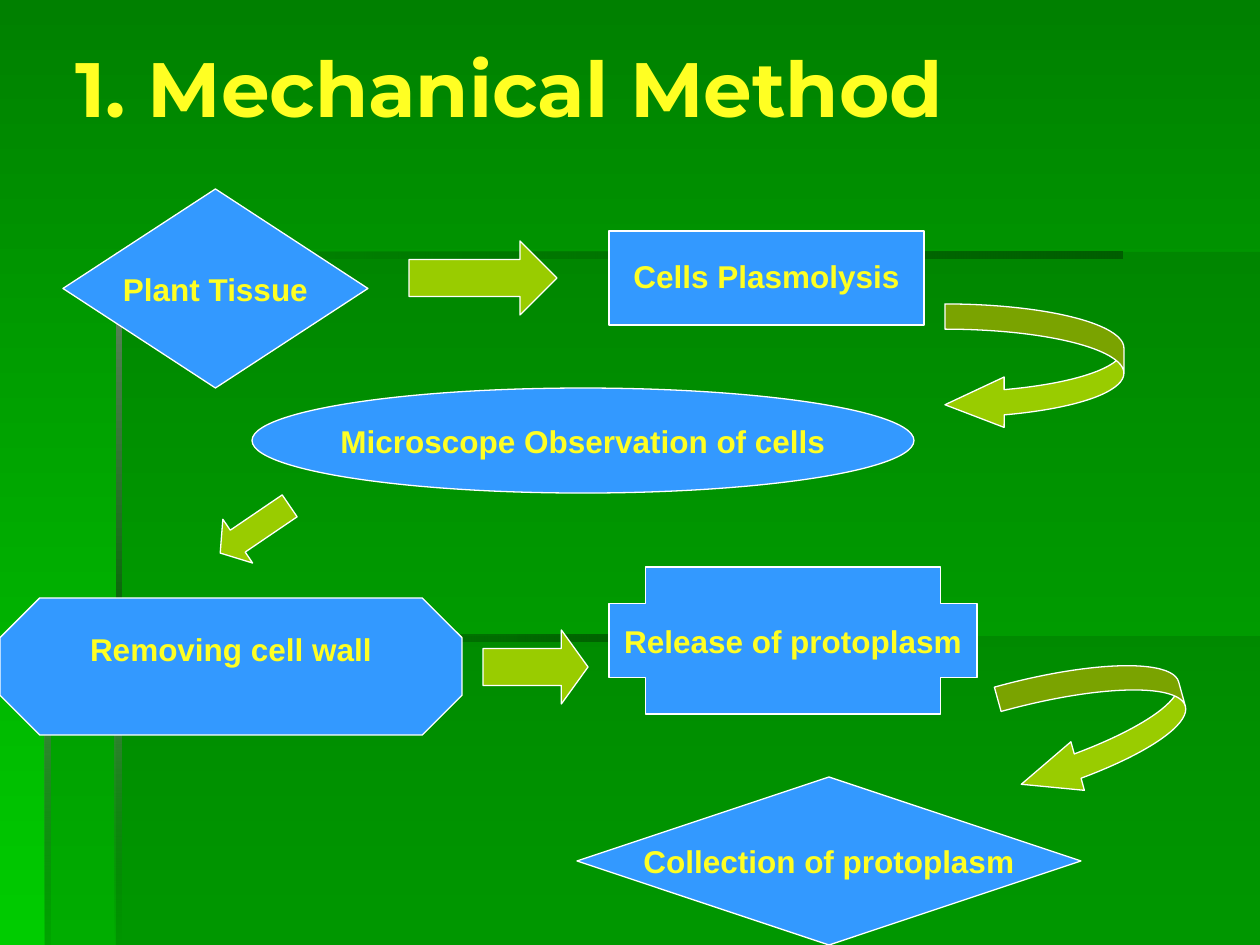
from pptx import Presentation
from pptx.dml.color import RGBColor
from pptx.enum.shapes import MSO_SHAPE as Shape
from pptx.enum.text import MSO_ANCHOR as Anchor, MSO_AUTO_SIZE as AutoSize, PP_ALIGN as Align
from pptx.oxml.ns import qn
from pptx.util import Pt
from lxml.etree import SubElement

EMU_PER_PX = 914400 / 126
YELLOW = RGBColor(0xFF, 0xFF, 0x23)
BLUE = RGBColor(0x33, 0x99, 0xFF)
LIME = RGBColor(0x99, 0xCC, 0x00)
WHITE = RGBColor(0xFF, 0xFF, 0xFF)
GREEN_TOP = RGBColor(0x00, 0x80, 0x00)
GREEN_BOTTOM = RGBColor(0x00, 0xCC, 0x00)
SHADE = RGBColor(0x00, 0x66, 0x00)
SHADE_END = RGBColor(0x00, 0x5E, 0x00)
GREY_GREEN = RGBColor(0x66, 0x86, 0x66)
RIGHTWARD, DOWNWARD = 0, 270


def px(length):
    return round(length * EMU_PER_PX)


def set_gradient(fill, colors, angle):
    fill.gradient()
    fill.gradient_angle = angle
    for stop, color in zip(fill.gradient_stops, colors):
        stop.color.rgb = color


class FlowSlide:
    def __init__(self, prs):
        self.slide = prs.slides.add_slide(prs.slide_layouts[5])
        self.shapes = self.slide.shapes
        set_gradient(self.slide.background.fill, (GREEN_TOP, GREEN_BOTTOM), DOWNWARD)

    def label(self, paragraph, text, size, font, align):
        paragraph.alignment = align
        run = paragraph.add_run()
        run.text = text
        run.font.size = Pt(size)
        run.font.name = font
        run.font.bold = True
        run.font.color.rgb = YELLOW

    def title(self, text, left, top, width, height):
        heading = self.shapes.title
        heading.left, heading.top = px(left), px(top)
        heading.width, heading.height = px(width), px(height)
        frame = heading.text_frame
        frame.auto_size = AutoSize.NONE
        frame.vertical_anchor = Anchor.TOP
        self.label(frame.paragraphs[0], text, 44, "Montserrat", Align.LEFT)

    def outline(self, points):
        builder = self.shapes.build_freeform(*points[0], scale=EMU_PER_PX)
        builder.add_line_segments(points[1:], close=True)
        area = builder.convert_to_shape()
        area.shadow.inherit = False
        area.line.fill.background()
        return area

    def set_opacity(self, area, percents):
        colors = area._element.spPr.iter(qn("a:srgbClr"))
        for color, percent in zip(colors, percents):
            if percent < 100:
                SubElement(color, qn("a:alpha")).set("val", str(percent * 1000))

    def panel(self, points):
        area = self.outline(points)
        area.fill.solid()
        area.fill.fore_color.rgb = SHADE
        self.set_opacity(area, [30])

    def bar(self, points, colors, angle, opacity):
        area = self.outline(points)
        set_gradient(area.fill, colors, angle)
        self.set_opacity(area, opacity)

    def figure(self, kind, left, top, width, height, color, adjust=(), turn=0):
        figure = self.shapes.add_shape(kind, px(left), px(top), px(width), px(height))
        figure.shadow.inherit = False
        figure.fill.solid()
        figure.fill.fore_color.rgb = color
        figure.line.color.rgb = WHITE
        figure.line.width = Pt(0.75)
        figure.rotation = turn
        for i, value in enumerate(adjust):
            figure.adjustments[i] = value
        return figure

    def step(self, text, kind, left, top, width, height, adjust=(), lift=0):
        frame = self.figure(kind, left, top, width, height, BLUE, adjust).text_frame
        frame.word_wrap = False
        frame.vertical_anchor = Anchor.MIDDLE
        frame.margin_bottom = px(6 + lift)
        self.label(frame.paragraphs[0], text, 18, "Arial", Align.CENTER)

    def arrow(self, kind, left, top, width, height, adjust, turn=0):
        self.figure(kind, left, top, width, height, LIME, adjust, turn)


def main():
    prs = Presentation()
    prs.slide_width, prs.slide_height = px(1260), px(945)
    flow = FlowSlide(prs)

    # Shaded background panels
    flow.panel([(116, 636), (116, 945), (1260, 945), (1260, 636)])
    flow.panel([(118, 637), (45, 637), (45, 945), (1260, 945), (1260, 252), (118, 252)])

    # Horizontal bars, fading in to the right
    for left, top, width in ((116, 252, 1007), (44, 635, 630)):
        right, bottom = left + width, top + 6
        flow.bar([(left, top), (left, bottom), (right, bottom), (right, top)],
                 (SHADE, SHADE_END), RIGHTWARD, (0, 100))

    # Vertical bars with a mitred top
    for left, top, bottom, end_opacity in ((116, 252, 643, 100), (115, 635, 945, 0),
                                           (44, 635, 945, 10)):
        flow.bar([(left, top), (left, bottom), (left + 6, bottom), (left + 6, top + 6)],
                 (GREY_GREEN, SHADE), DOWNWARD, (100, end_opacity))

    flow.title("1. Mechanical Method", 63, 34, 1155, 198)

    # Steps of the method
    flow.step("Plant Tissue", Shape.DIAMOND, 63, 189, 305, 199)
    flow.step("Cells Plasmolysis", Shape.RECTANGLE, 609, 231, 315, 94, lift=4)
    flow.step("Microscope Observation of cells", Shape.OVAL, 252, 388, 662, 105)
    flow.step("Removing cell wall", Shape.OCTAGON, 0, 598, 462, 137, [0.29], lift=36)
    flow.step("Release of protoplasm", Shape.CROSS, 609, 567, 368, 147, [0.25])
    flow.step("Collection of protoplasm", Shape.DIAMOND, 577, 777, 504, 168)

    # Arrows between the steps
    curve = (0.2, 0.4, 0.47)
    flow.arrow(Shape.RIGHT_ARROW, 409, 241, 148, 74, (0.5, 0.5))
    flow.arrow(Shape.CURVED_LEFT_ARROW, 945, 304, 179, 126, curve)
    flow.arrow(Shape.LEFT_ARROW, 213, 503, 84, 53, (0.5, 0.4), turn=325.8)
    flow.arrow(Shape.RIGHT_ARROW, 483, 630, 105, 74, (0.5, 0.36))
    flow.arrow(Shape.CURVED_LEFT_ARROW, 1008, 661, 179, 126, curve, turn=344.5)

    prs.save("out.pptx")


if __name__ == "__main__":
    main()
